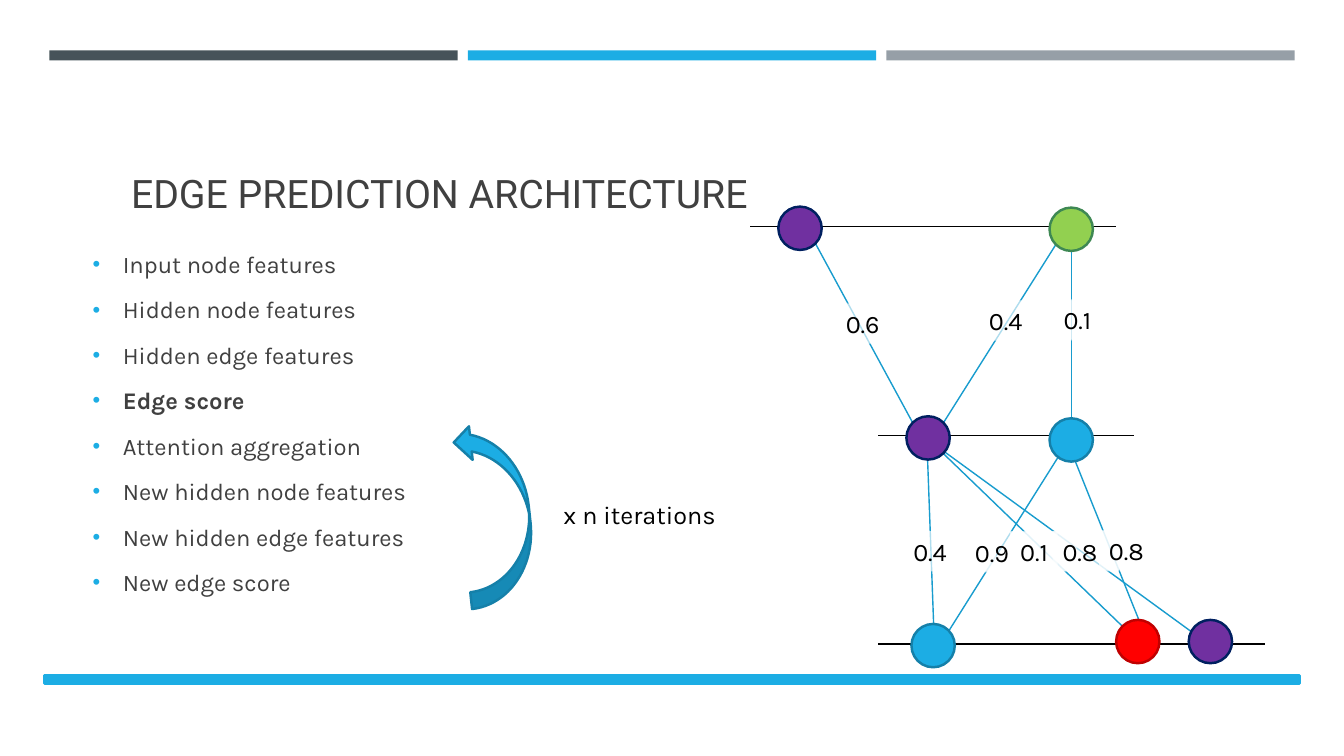
from lxml import etree
from pptx import Presentation
from pptx import util as u
from pptx.dml.color import RGBColor
from pptx.enum import shapes as s, text as t
from pptx.oxml.ns import qn

# Content
TITLE = "EDGE PREDICTION ARCHITECTURE"
STEPS = ["Input node features", "Hidden node features", "Hidden edge features",
         "Edge score", "Attention aggregation", "New hidden node features",
         "New hidden edge features", "New edge score"]
BOLD_STEP = "Edge score"
LOOP_NOTE = "x n iterations"

BLUE, DARK_BLUE, EDGE_BLUE = "1CADE4", "1580A9", "189CCE"
PURPLE, NAVY, GREY_TEXT, BLACK, WHITE = "7030A0", "002060", "404040", "000000", "FFFFFF"
HEADER_BARS = ["465359", BLUE, "969FA7"]

# Graph edges: x, y of start, then x, y of end
EDGES = [
    (9.26, 6.19, 9.2, 4.56), (9.05, 4.19, 8.09, 2.42), (9.36, 4.19, 10.47, 2.43),
    (10.63, 4.15, 10.63, 2.49), (9.41, 6.26, 10.63, 4.32), (11.44, 6.51, 10.63, 4.49),
    (11.44, 6.51, 9.17, 4.32), (12.15, 6.51, 9.2, 4.36),
]
# Layer lines: left, right, y
LAYERS = [(7.44, 11.07, 2.25), (8.71, 11.25, 4.32), (8.71, 12.55, 6.39)]
# Nodes: left, top, fill, outline
NODE_SIZE = 0.43
NODES = [
    (9.04, 6.19, BLUE, DARK_BLUE), (10.41, 4.15, BLUE, DARK_BLUE),
    (11.07, 6.15, "FF0000", "C00000"), (10.41, 2.06, "92D050", "3E8853"),
    (11.79, 6.15, PURPLE, NAVY), (8.99, 4.13, PURPLE, NAVY), (7.72, 2.05, PURPLE, NAVY),
]
# Edge scores: text, left, top, width
SCORES = [
    ("0.6", 8.29, 3.01, 0.92), ("0.4", 9.71, 2.98, 0.92), ("0.1", 10.45, 2.97, 0.92),
    ("0.4", 8.96, 5.27, 0.92), ("0.9", 9.57, 5.28, 0.92), ("0.1", 10.02, 5.27, 0.66),
    ("0.8", 10.44, 5.27, 0.66), ("0.8", 10.9, 5.26, 0.92),
]


def color(hex_code):
    return RGBColor.from_string(hex_code)


def inches(*lengths):
    return [u.Inches(length) for length in lengths]


def style(para, size, hex_code, font="Karla"):
    para.font.size = u.Pt(size)
    para.font.name = font
    para.font.color.rgb = color(hex_code)


def add_shape(parent, kind, area, fill, line=None):
    shape = parent.add_shape(kind, *inches(*area))
    shape.shadow.inherit = False
    shape.fill.solid()
    shape.fill.fore_color.rgb = color(fill)
    if line:
        shape.line.color.rgb = color(line)
        shape.line.width = u.Pt(1.75)
    else:
        shape.line.fill.background()
    return shape


def add_line(parent, ends, hex_code):
    line = parent.add_connector(s.MSO_CONNECTOR.STRAIGHT, *inches(*ends))
    line.line.color.rgb = color(hex_code)
    line.line.width = u.Pt(1)
    etree.SubElement(line.element.spPr, qn("a:effectLst"))


def add_label(area, words):
    box = slide.shapes.add_textbox(*inches(*area))
    box.text_frame.word_wrap = True
    box.text_frame.auto_size = t.MSO_AUTO_SIZE.SHAPE_TO_FIT_TEXT
    para = box.text_frame.paragraphs[0]
    para.text = words
    style(para, 18, BLACK)
    return box


def add_bullet(para):
    props = para._p.get_or_add_pPr()
    props.set("marL", str(u.Inches(0.3)))
    props.set("indent", str(u.Inches(-0.3)))
    tint = etree.SubElement(props, qn("a:buClr"))
    etree.SubElement(tint, qn("a:srgbClr"), val=BLUE)
    etree.SubElement(props, qn("a:buSzPct"), val="92000")
    etree.SubElement(props, qn("a:buFont"), typeface="Arial")
    etree.SubElement(props, qn("a:buChar"), char="•")


deck = Presentation()
deck.slide_width, deck.slide_height = inches(13.33, 7.5)
slide = deck.slides.add_slide(deck.slide_layouts[5])

# Header bars and footer bar
for i, fill in enumerate(HEADER_BARS):
    add_shape(slide.shapes, s.MSO_SHAPE.RECTANGLE, (0.49 + 4.15 * i, 0.5, 4.05, 0.1), fill)
add_shape(slide.shapes, s.MSO_SHAPE.RECTANGLE, (0.44, 6.7, 12.45, 0.08), BLUE, BLUE)

# Title
title = slide.shapes.title
title.left, title.top, title.width, title.height = inches(1.2, 0.75, 11.5, 1.45)
title.text_frame.text = TITLE
title.text_frame.vertical_anchor = t.MSO_ANCHOR.BOTTOM
title.text_frame.paragraphs[0].alignment = t.PP_ALIGN.LEFT
style(title.text_frame.paragraphs[0], 28, GREY_TEXT, "Roboto")

# Bulleted steps
steps = slide.shapes.add_textbox(*inches(0.82, 2.4, 4.2, 3.7)).text_frame
steps.word_wrap = True
for i, step in enumerate(STEPS):
    para = steps.add_paragraph() if i else steps.paragraphs[0]
    para.text = step
    para.line_spacing = 1.1
    para.space_before = u.Pt(4 if i else 0)
    para.space_after = u.Pt(6)
    add_bullet(para)
    style(para, 17, GREY_TEXT)
    para.font.bold = step == BOLD_STEP

# Loop arrow and its note
arrow = add_shape(slide.shapes, s.MSO_SHAPE.CURVED_RIGHT_ARROW,
                  (4.58, 4.18, 0.67, 1.83), BLUE, DARK_BLUE)
arrow.rotation = 173.7
add_label((5.49, 4.9, 1.95, 0.4), LOOP_NOTE)

# Graph
graph = slide.shapes.add_group_shape().shapes
for ends in EDGES:
    add_line(graph, ends, EDGE_BLUE)
for left, right, y in LAYERS:
    add_line(graph, (left, y, right, y), BLACK)
for left, top, fill, outline in NODES:
    add_shape(graph, s.MSO_SHAPE.OVAL, (left, top, NODE_SIZE, NODE_SIZE), fill, outline)

# Edge scores on translucent white
for score, left, top, width in SCORES:
    label = add_label((left, top, width, 0.4), score)
    label.fill.solid()
    label.fill.fore_color.rgb = color(WHITE)
    tint = label.element.spPr.find(qn("a:solidFill")).find(qn("a:srgbClr"))
    etree.SubElement(tint, qn("a:alpha"), val="65000")

deck.save("out.pptx")
